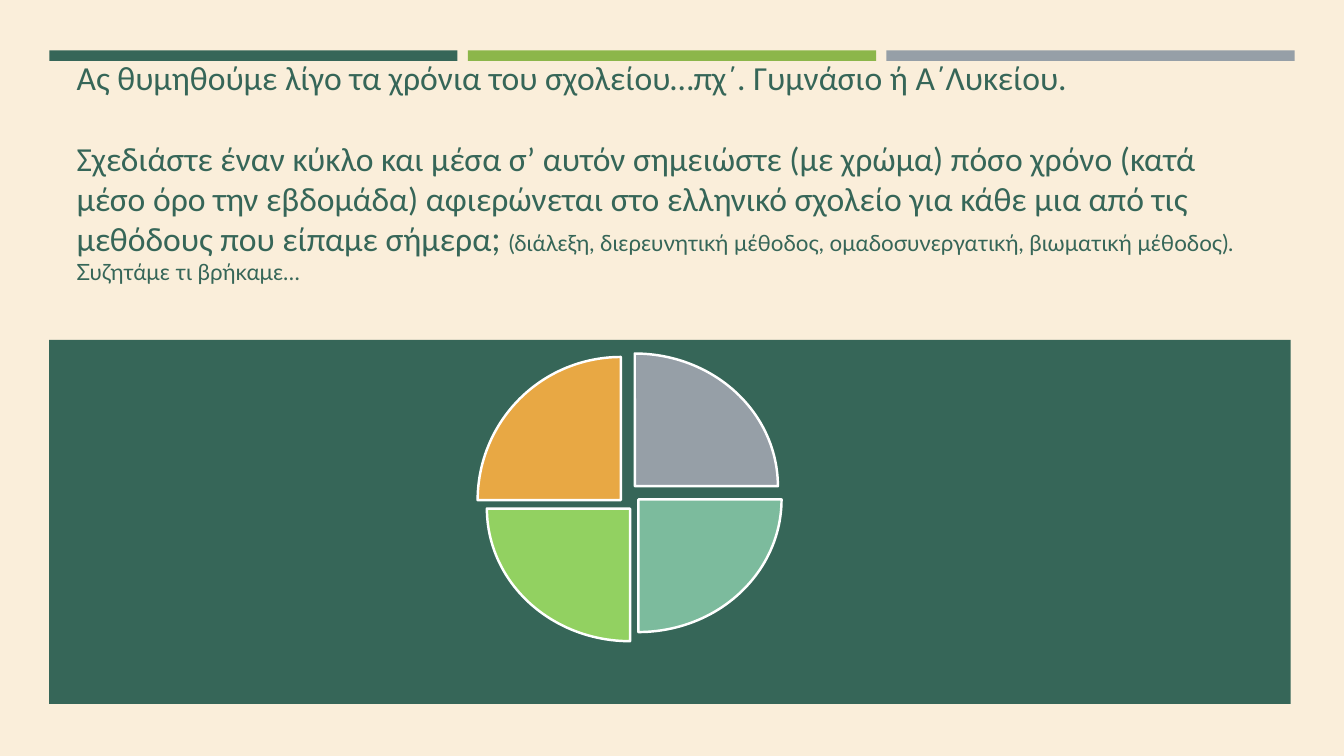
from dataclasses import dataclass

from pptx import Presentation
from pptx.dml.color import RGBColor
from pptx.enum.shapes import MSO_SHAPE
from pptx.enum.text import MSO_ANCHOR, MSO_AUTO_SIZE, PP_ALIGN
from pptx.util import Pt

RECT = MSO_SHAPE.RECTANGLE
PIE = MSO_SHAPE.PIE
BOTTOM = MSO_ANCHOR.BOTTOM
LEFT = PP_ALIGN.LEFT
NO_FIT = MSO_AUTO_SIZE.NONE
TITLE_ONLY = 5


@dataclass(frozen=True)
class Theme:
    cream: str = "FAEEDA"
    green: str = "366658"
    lime: str = "8CB64A"
    grey: str = "969FA7"
    mint: str = "7CBB9D"
    light_green: str = "92D161"
    orange: str = "E8A844"
    white: str = "FFFFFF"
    heading_font: str = "Calibri"
    detail_font: str = "Lato"
    heading_size: int = 24
    detail_size: int = 16
    outline: float = 1.75


THEME = Theme()

INTRO = "Ας θυμηθούμε λίγο τα χρόνια του σχολείου…πχ΄. Γυμνάσιο ή Α΄Λυκείου."
TASK = (
    "Σχεδιάστε έναν κύκλο και μέσα σ’ αυτόν σημειώστε (με χρώμα) πόσο χρόνο "
    "(κατά μέσο όρο την εβδομάδα) αφιερώνεται στο ελληνικό σχολείο για κάθε μια "
    "από τις μεθόδους που είπαμε σήμερα"
)
METHODS = (
    "(διάλεξη, διερευνητική μέθοδος, ομαδοσυνεργατική, βιωματική μέθοδος). "
    "Συζητάμε τι βρήκαμε…"
)


def rgb(color):
    return RGBColor.from_string(color)


def add_filled(shapes, kind, box, color):
    s = shapes.add_shape(kind, *map(Pt, box))
    s.shadow.inherit = False
    s.fill.solid()
    s.fill.fore_color.rgb = rgb(color)
    s.line.fill.background()
    return s


def add_quarter(shapes, box, start, color):
    s = add_filled(shapes, PIE, box, color)
    s.adjustments[0] = start
    s.adjustments[1] = (start + 54) % 216
    s.line.color.rgb = rgb(THEME.white)
    s.line.width = Pt(THEME.outline)


def add_run(p, text, font, size):
    r = p.add_run()
    r.text = text
    r.font.name = font
    r.font.size = Pt(size)


def format_paragraph(p):
    p.alignment = LEFT
    p.font.color.rgb = rgb(THEME.green)


def fill_title(s):
    s.left, s.top, s.width, s.height = map(Pt, (47.5, 48.2, 865.4, 178.6))
    tf = s.text_frame
    tf.word_wrap = True
    tf.auto_size = NO_FIT
    tf.vertical_anchor = BOTTOM
    tf.margin_bottom = Pt(23)
    p = tf.paragraphs[0]
    format_paragraph(p)
    add_run(p, INTRO, THEME.heading_font, THEME.heading_size)
    p = tf.add_paragraph()
    format_paragraph(p)
    p.space_before = Pt(29)
    add_run(p, TASK, THEME.heading_font, THEME.heading_size)
    add_run(p, "; ", THEME.detail_font, THEME.heading_size)
    add_run(p, METHODS, THEME.detail_font, THEME.detail_size)


def main():
    prs = Presentation()
    prs.slide_width, prs.slide_height = Pt(960), Pt(540)
    slide = prs.slides.add_slide(prs.slide_layouts[TITLE_ONLY])
    slide.background.fill.solid()
    slide.background.fill.fore_color.rgb = rgb(THEME.cream)

    for i, color in enumerate((THEME.green, THEME.lime, THEME.grey)):
        add_filled(slide.shapes, RECT, (35.2 + 299 * i, 36, 291.6, 7.5), color)
    add_filled(slide.shapes, RECT, (35.2, 242.8, 886.8, 260), THEME.green)
    fill_title(slide.shapes.title)

    circle = slide.shapes.add_group_shape()
    quarters = (
        (351.2, 252.5, 189.5, THEME.grey),
        (353.8, 262, 189.5, THEME.mint),
        (347.8, 268.5, 189.5, THEME.light_green),
        (341.2, 255, 204.5, THEME.orange),
    )
    for i, (left, top, height, color) in enumerate(quarters):
        start = (162 + 54 * i) % 216
        add_quarter(circle.shapes, (left, top, 204.5, height), start, color)

    prs.save("out.pptx")


if __name__ == "__main__":
    main()
